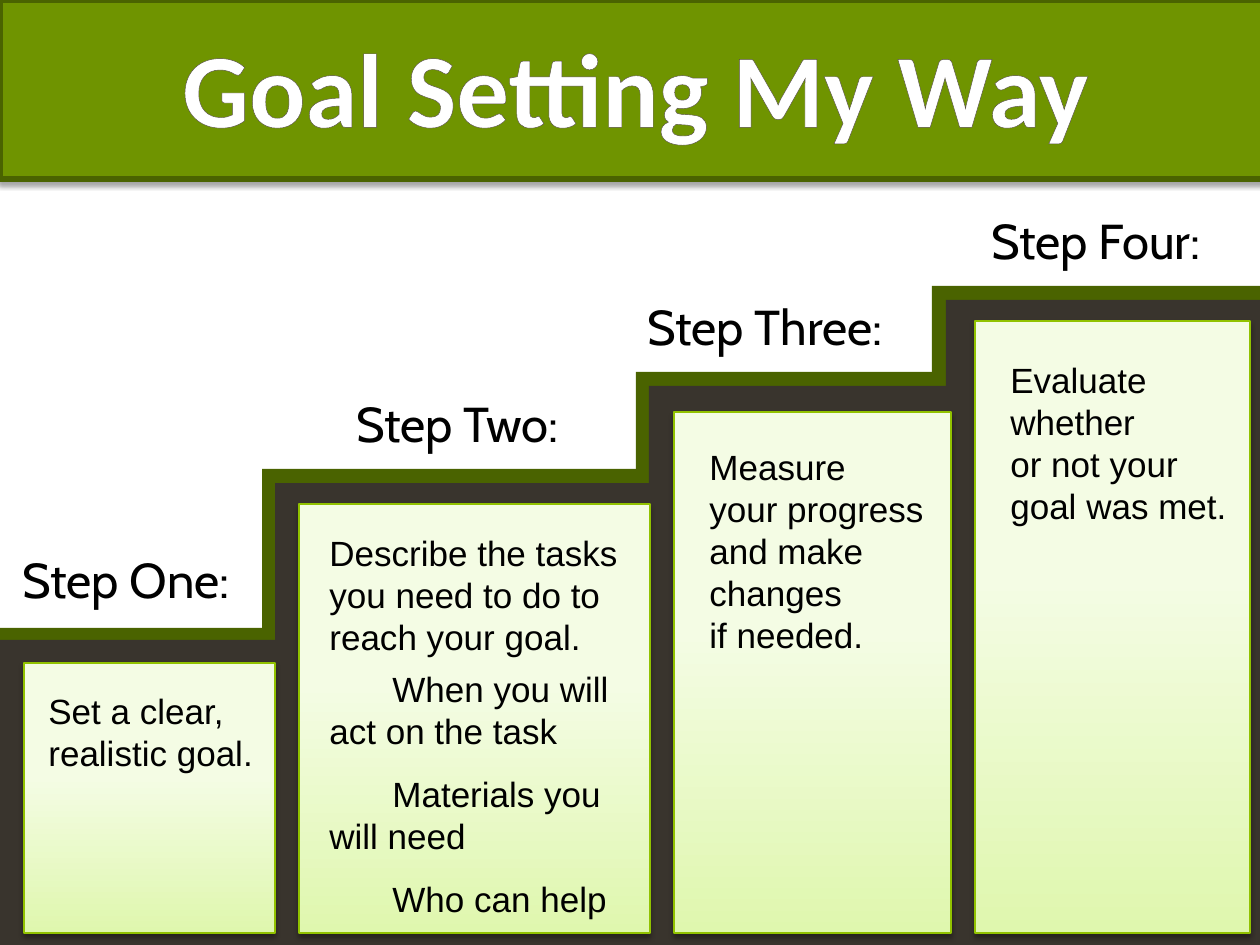
from lxml import etree
from pptx import Presentation
from pptx.dml.color import RGBColor
from pptx.enum.shapes import MSO_SHAPE
from pptx.enum.text import MSO_ANCHOR, PP_ALIGN
from pptx.oxml.ns import qn
from pptx.util import Pt

RECT = MSO_SHAPE.RECTANGLE
LEFT, CENTER = PP_ALIGN.LEFT, PP_ALIGN.CENTER
TOP, MIDDLE = MSO_ANCHOR.TOP, MSO_ANCHOR.MIDDLE
PX = 914400 / 126

LEAF = RGBColor(0x6F, 0x94, 0x00)
MOSS = RGBColor(0x4A, 0x63, 0x00)
EARTH = RGBColor(0x39, 0x34, 0x2D)
LIME = RGBColor(0x91, 0xC2, 0x00)
MINT = RGBColor(0xDF, 0xF7, 0xAE)
PALE = RGBColor(0xF4, 0xFC, 0xE4)
WHITE = RGBColor(0xFF, 0xFF, 0xFF)
BLACK = RGBColor(0x00, 0x00, 0x00)
STONE = "554E44"

deck = Presentation()
deck.slide_width, deck.slide_height = round(1260 * PX), round(945 * PX)
slide = deck.slides.add_slide(deck.slide_layouts[6])


def add_box(box, fill=None, line=None, width=0.75, shade=False):
    shape = slide.shapes.add_shape(RECT, *[round(n * PX) for n in box])
    shape.shadow.inherit = False
    if fill:
        shape.fill.solid()
        shape.fill.fore_color.rgb = fill
    else:
        shape.fill.gradient()
        shape.fill.gradient_angle = 90
        for stop, color, place in zip(shape.fill.gradient_stops, (MINT, PALE), (0, 0.58)):
            stop.color.rgb = color
            stop.position = place
    if line:
        shape.line.color.rgb = line
        shape.line.width = Pt(width)
    else:
        shape.line.fill.background()
    if shade:
        effects = shape._element.spPr.find(qn("a:effectLst"))
        outer = etree.SubElement(effects, qn("a:outerShdw"), blurRad=str(Pt(3.1)),
                                 dist=str(Pt(1.8)), dir="5400000", rotWithShape="0")
        tint = etree.SubElement(outer, qn("a:srgbClr"), val="000000")
        etree.SubElement(tint, qn("a:alpha"), val="35000")


def add_text(box, lines, size=20, font="Arial", color=BLACK, bold=False,
             align=LEFT, anchor=TOP, gap=0, indent=0):
    frame = slide.shapes.add_textbox(*[round(n * PX) for n in box]).text_frame
    frame.word_wrap = True
    frame.vertical_anchor = anchor
    for i, line in enumerate(lines):
        para = frame.paragraphs[0] if i == 0 else frame.add_paragraph()
        para.alignment = align
        if i:
            para.space_before = Pt(gap)
            para.space_after = Pt(gap)
            para._p.get_or_add_pPr().set("indent", str(round(indent * PX)))
        run = para.add_run()
        run.text = line
        run.font.size = Pt(size)
        run.font.name = font
        run.font.bold = bold
        run.font.color.rgb = color
    return frame


for box in [(932, 286, 338, 644), (636, 372, 379, 567),
            (262, 469, 437, 466), (0, 628, 489, 305)]:
    add_box(box, MOSS)

add_box((0, 0, 1270, 179), LEAF, MOSS, 3, True)
title = add_text((52, -16, 1167, 203), ["Goal Setting My Way"], size=60, font="Calibri",
                 color=WHITE, bold=True, align=CENTER, anchor=MIDDLE)
edge = etree.Element(qn("a:ln"), w=str(Pt(1.5)))
paint = etree.SubElement(edge, qn("a:solidFill"))
etree.SubElement(paint, qn("a:srgbClr"), val=STONE)
title.paragraphs[0].runs[0].font._element.insert(0, edge)

for left, top, width in [(946, 300, 324), (649, 386, 372), (275, 483, 473), (0, 640, 501)]:
    add_box((left, top, width, 945 - top), EARTH)

for name, left, top, width in [("One", 10, 543, 251), ("Two", 344, 387, 251),
                               ("Three", 635, 290, 291), ("Four", 979, 204, 262)]:
    add_text((left, top, width, 72), [f"Step {name}:"], size=28, font="Cabin")

CARDS = [
    ((24, 663, 251), (36, 683, 250, 97), ["Set a clear, realistic goal."], {}),
    ((299, 504, 351), (317, 525, 337, 404),
     ["Describe the tasks you need to do to reach your goal.",
      "When you will act on the task", "Materials you will need", "Who can help"],
     {"gap": 6, "indent": 63}),
    ((674, 412, 277), (697, 439, 250, 224),
     ["Measure", "your progress and make changes", "if needed."], {}),
    ((975, 321, 275), (998, 352, 250, 183),
     ["Evaluate whether", "or not your goal was met."], {}),
]
for (left, top, width), box, lines, style in CARDS:
    add_box((left, top, width, 933 - top), line=LIME, shade=True)
    add_text(box, lines, **style)

deck.save("out.pptx")
